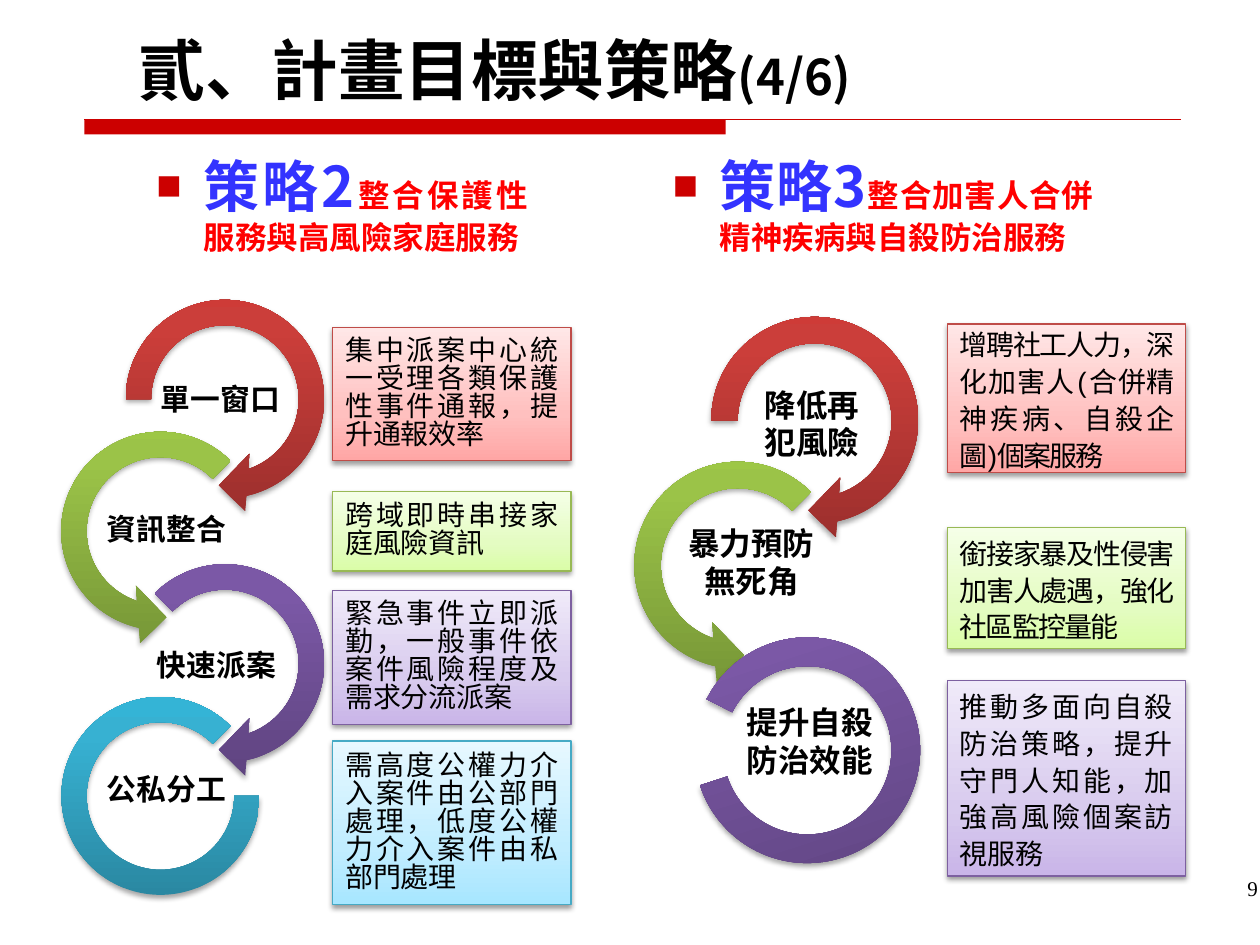
from lxml import etree
from pptx import Presentation
from pptx import util as u
from pptx.dml.color import RGBColor
from pptx.enum import shapes, text
from pptx.oxml import ns

BLACK = RGBColor(0x00, 0x00, 0x00)
CRIMSON = RGBColor(0xCC, 0x00, 0x00)
RED = RGBColor(0xFF, 0x00, 0x00)
BLUE = RGBColor(0x33, 0x33, 0xFF)

ARC_STOPS = {
    "red": ((0, RGBColor(0x9C, 0x2F, 0x2D)), (80, RGBColor(0xCB, 0x3E, 0x3A)), (100, RGBColor(0xCE, 0x3B, 0x37))),
    "green": ((0, RGBColor(0x77, 0x97, 0x37)), (80, RGBColor(0x9B, 0xC3, 0x48)), (100, RGBColor(0x9D, 0xC7, 0x46))),
    "purple": ((0, RGBColor(0x5F, 0x44, 0x80)), (80, RGBColor(0x7B, 0x58, 0xA6)), (100, RGBColor(0x7C, 0x57, 0xA8))),
    "teal": ((0, RGBColor(0x2A, 0x88, 0xA2)), (80, RGBColor(0x37, 0xB1, 0xD2)), (100, RGBColor(0x34, 0xB4, 0xD6))),
}
CARD_STOPS = {
    "red": ((0, RGBColor(0xFF, 0xA6, 0xA5)), (35, RGBColor(0xFF, 0xC0, 0xBF)), (100, RGBColor(0xFF, 0xE7, 0xE7))),
    "green": ((0, RGBColor(0xDA, 0xFD, 0xA7)), (35, RGBColor(0xE4, 0xFC, 0xC2)), (100, RGBColor(0xF5, 0xFF, 0xE7))),
    "purple": ((0, RGBColor(0xC9, 0xB5, 0xE8)), (35, RGBColor(0xD8, 0xCB, 0xEE)), (100, RGBColor(0xF0, 0xEA, 0xF9))),
    "teal": ((0, RGBColor(0xA7, 0xE6, 0xFF)), (35, RGBColor(0xC1, 0xED, 0xFF)), (100, RGBColor(0xE7, 0xF8, 0xFF))),
}
CARD_LINES = {
    "red": RGBColor(0xBF, 0x4C, 0x48),
    "green": RGBColor(0x98, 0xB9, 0x55),
    "purple": RGBColor(0x7D, 0x60, 0xA0),
    "teal": RGBColor(0x46, 0xAA, 0xC5),
}

SHAPE = shapes.MSO_SHAPE
RIGHT_TURN = (SHAPE.CIRCULAR_ARROW, (0.11, 11.42, 45, 108, 0.125))
RIGHT_TURN_LONG = (SHAPE.CIRCULAR_ARROW, (0.11, 11.42, 45, 135, 0.125))
LEFT_TURN = (SHAPE.LEFT_CIRCULAR_ARROW, (0.11, 11.42, 63, 189, 0.125))
END_RING = (SHAPE.BLOCK_ARC, (0, 189, 0.127))
TILTED_RING = (SHAPE.BLOCK_ARC, (135, 108, 0.127))


def add_xml(parent, tag, **attributes):
    return etree.SubElement(parent, ns.qn(tag), attributes)


def add_span(para, words, size, font="Noto Sans CJK SC", color=BLACK, bold=False, spacing=0):
    span = para.add_run()
    span.text = words
    span.font.size = u.Pt(size)
    span.font.name = font
    span.font.bold = bold
    span.font.color.rgb = color
    properties = span.font._element
    add_xml(properties, "a:ea", typeface=font)
    if spacing:
        properties.set("spc", str(spacing * 100))


class SlideBuilder:
    heading_font = "Noto Sans CJK SC"
    label_font = "Arial"

    def __init__(self, deck):
        self.page = deck.slides.add_slide(deck.slide_layouts[3])

    def place(self, box, area):
        box.left, box.top, box.width, box.height = (u.Cm(n) for n in area)

    def frame(self, box, anchor, inset=None):
        frame = box.text_frame
        frame.word_wrap = True
        frame.auto_size = text.MSO_AUTO_SIZE.NONE
        frame.vertical_anchor = anchor
        if inset is not None:
            frame.margin_left = frame.margin_right = u.Cm(inset)
            frame.margin_top = frame.margin_bottom = u.Cm(inset)
        return frame

    def title(self, words, counter, area):
        box = self.page.shapes.title
        self.place(box, area)
        para = self.frame(box, text.MSO_ANCHOR.BOTTOM).paragraphs[0]
        para.alignment = text.PP_ALIGN.LEFT
        add_span(para, words, 38, bold=True)
        add_span(para, counter, 28, bold=True)

    def strategy(self, index, name, detail, area):
        box = self.page.placeholders[index]
        self.place(box, area)
        para = self.frame(box, text.MSO_ANCHOR.TOP).paragraphs[0]
        properties = para._p.get_or_add_pPr()
        properties.set("marL", str(u.Cm(0.95)))
        properties.set("indent", str(u.Cm(-0.95)))
        add_xml(add_xml(properties, "a:buClr"), "a:srgbClr", val=str(CRIMSON))
        add_xml(properties, "a:buSzPct", val="75000")
        add_xml(properties, "a:buChar", char="■")
        para.alignment = text.PP_ALIGN.JUSTIFY
        para.space_before = u.Pt(0)
        add_span(para, name, 32, color=BLUE, bold=True)
        add_span(para, detail, 18, color=RED, bold=True)

    def rule(self, left, top, bar_width, bar_height, right):
        bar = self.shape(SHAPE.RECTANGLE, (left, top, bar_width, bar_height))
        bar.fill.solid()
        bar.fill.fore_color.rgb = CRIMSON
        bar.line.fill.background()
        line = self.page.shapes.add_connector(
            shapes.MSO_CONNECTOR.STRAIGHT, u.Cm(left), u.Cm(top), u.Cm(right), u.Cm(top))
        line.line.color.rgb = CRIMSON
        line.line.width = u.Pt(0.75)
        add_xml(line._element.spPr, "a:effectLst")

    def shape(self, kind, area):
        box = self.page.shapes.add_shape(kind, *(u.Cm(n) for n in area))
        box.shadow.inherit = False
        return box

    def gradient_shape(self, kind, area, stops, opacity, distance):
        box = self.shape(kind, area)
        box.fill.gradient()
        box.line.fill.background()
        gradient = box._element.spPr.find(ns.qn("a:gradFill"))
        for child in list(gradient):
            gradient.remove(child)
        stop_list = add_xml(gradient, "a:gsLst")
        for position, color in stops:
            stop = add_xml(stop_list, "a:gs", pos=str(position * 1000))
            add_xml(stop, "a:srgbClr", val=str(color))
        add_xml(gradient, "a:lin", ang="16200000", scaled="0")
        effects = box._element.spPr.find(ns.qn("a:effectLst"))
        shadow = add_xml(effects, "a:outerShdw", blurRad=str(u.Pt(3.1)), dist=str(u.Pt(distance)),
                         dir="5400000", rotWithShape="0")
        add_xml(add_xml(shadow, "a:srgbClr", val=str(BLACK)), "a:alpha", val=str(opacity * 1000))
        return box

    def arc(self, style, hue, left, top, size, rotation=0):
        kind, adjustments = style
        box = self.gradient_shape(kind, (left, top, size, size), ARC_STOPS[hue], 35, 1.8)
        for index, value in enumerate(adjustments):
            box.adjustments[index] = value
        box.rotation = rotation

    def label(self, lines, area, size, font, line_spacing):
        box = self.page.shapes.add_textbox(*(u.Cm(n) for n in area))
        frame = self.frame(box, text.MSO_ANCHOR.MIDDLE, 0.03)
        for index, words in enumerate(lines):
            para = frame.add_paragraph() if index else frame.paragraphs[0]
            para.alignment = text.PP_ALIGN.CENTER
            para.line_spacing = line_spacing
            add_span(para, words, size, font=font, bold=True)

    def card(self, hue, words, area, leading, font, spacing=0):
        box = self.gradient_shape(SHAPE.RECTANGLE, area, CARD_STOPS[hue], 38, 1.6)
        box.line.color.rgb = CARD_LINES[hue]
        box.line.width = u.Pt(0.75)
        para = self.frame(box, text.MSO_ANCHOR.MIDDLE).paragraphs[0]
        para.alignment = text.PP_ALIGN.JUSTIFY
        para.line_spacing = u.Pt(leading)
        add_span(para, words, 16, font=font, spacing=spacing)

    def page_number(self, words, area):
        box = self.page.shapes.add_textbox(*(u.Cm(n) for n in area))
        para = self.frame(box, text.MSO_ANCHOR.TOP).paragraphs[0]
        para.alignment = text.PP_ALIGN.RIGHT
        add_span(para, words, 12, font="Times New Roman")


def main():
    deck = Presentation()
    deck.slide_width, deck.slide_height = u.Cm(25.4), u.Cm(19.05)
    slide = SlideBuilder(deck)
    noto, arial = slide.heading_font, slide.label_font

    slide.rule(1.7, 2.41, 12.93, 0.3, 23.8)
    slide.page_number("9", (24.31, 17.53, 1.3, 1.32))
    slide.title("貳、計畫目標與策略", "(4/6)", (2.54, -0.86, 22.86, 3.18))
    slide.strategy(1, "策略2", "整合保護性服務與高風險家庭服務", (2.9, 2.92, 8, 2.69))
    slide.strategy(2, "策略3", "整合加害人合併精神疾病與自殺防治服務", (13.31, 2.92, 8.99, 2.69))

    for style, hue, left, top, size, words, label_left, label_top in (
        (RIGHT_TURN, "red", 2.21, 5.72, 4.65, "單一窗口", 3.15, 7.44),
        (LEFT_TURN, "green", 0.91, 8.38, 4.65, "資訊整合", 2.06, 10.06),
        (RIGHT_TURN_LONG, "purple", 2.21, 11.05, 4.65, "快速派案", 3.07, 12.8),
        (END_RING, "teal", 1.24, 14.05, 3.99, "公私分工", 2.06, 15.29),
    ):
        slide.arc(style, hue, left, top, size)
        slide.label([words], (label_left, label_top, 2.59, 1.3), 17, noto, 0.9)

    for style, hue, left, top, size, rotation, lines, area in (
        (RIGHT_TURN, "red", 14, 6.05, 4.85, 0, ("降低再", "犯風險"), (14.78, 7.8, 3.18, 1.47)),
        (LEFT_TURN, "green", 12.45, 8.97, 4.85, 0, ("暴力預防", "無死角"), (13.56, 10.59, 3.18, 1.47)),
        (TILTED_RING, "purple", 14, 12.85, 4.55, 341.9, ("提升自殺", "防治效能"), (14.15, 14.2, 4.34, 1.47)),
    ):
        slide.arc(style, hue, left, top, size, rotation)
        slide.label(lines, area, 18, arial, 1.0)

    for hue, top, height, font, words in (
        ("red", 6.6, 2.69, noto, "集中派案中心統一受理各類保護性事件通報，提升通報效率"),
        ("green", 9.91, 1.6, arial, "跨域即時串接家庭風險資訊"),
        ("purple", 11.91, 2.69, noto, "緊急事件立即派勤，一般事件依案件風險程度及需求分流派案"),
        ("teal", 14.94, 3.3, noto, "需高度公權力介入案件由公部門處理，低度公權力介入案件由私部門處理"),
    ):
        slide.card(hue, words, (6.71, top, 4.8, height), 16, font)

    for hue, top, height, spacing, words in (
        ("red", 6.53, 3, -1, "增聘社工人力，深化加害人(合併精神疾病、自殺企圖)個案服務"),
        ("green", 10.64, 2.44, -1, "銜接家暴及性侵害加害人處遇，強化社區監控量能"),
        ("purple", 13.72, 3.94, 0, "推動多面向自殺防治策略，提升守門人知能，加強高風險個案訪視服務"),
    ):
        slide.card(hue, words, (19.1, top, 4.8, height), 21, arial, spacing)

    deck.save("out.pptx")


if __name__ == "__main__":
    main()
